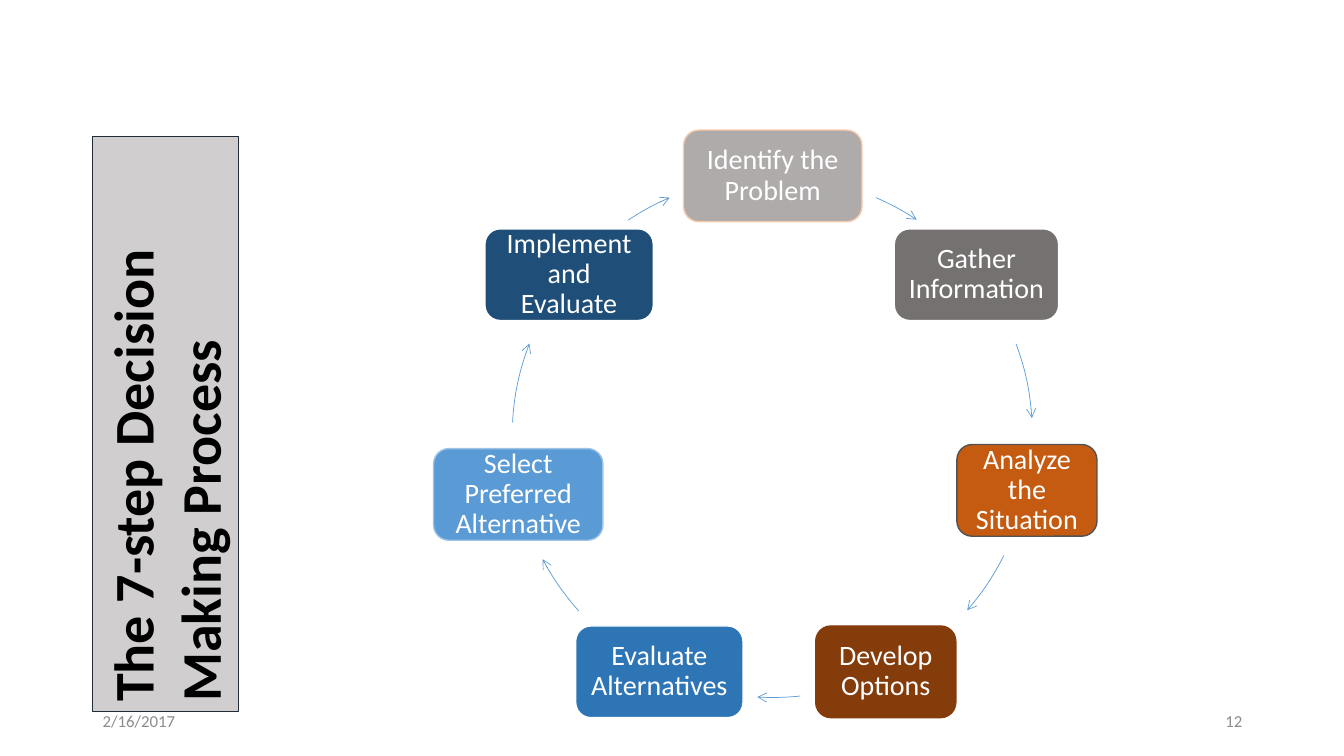
from pptx import Presentation
from pptx.util import Inches, Pt
from pptx.dml.color import RGBColor
from pptx.enum.shapes import MSO_SHAPE
from pptx.enum.text import PP_ALIGN, MSO_ANCHOR
from lxml.etree import SubElement
from pptx.oxml.ns import qn


def paint(form, color):
    form.rgb = RGBColor.from_string(color)


def write(shape, text, size, color, align, **extra):
    frame = shape.text_frame
    frame.word_wrap = True
    for key, value in extra.items():
        setattr(frame, key, value)
    para = frame.paragraphs[0]
    para.alignment = align
    run = para.add_run()
    run.text = text
    for key, value in {"name": "Calibri", "size": Pt(size)}.items():
        setattr(run.font, key, value)
    paint(run.font.color, color)
    return para


deck = Presentation()
deck.slide_width, deck.slide_height = Inches(13.33), Inches(7.5)
slide = deck.slides.add_slide(deck.slide_layouts[6])
shapes = slide.shapes

# Steps: text, left, top, width, fill, line
steps = [
    ("Identify the Problem", 6.78, 1.29, 1.77, "AFABAB", "F8CBAD"),
    ("Gather Information", 8.87, 2.27, 1.63, "767171", "FFFFFF"),
    ("Analyze the Situation", 9.49, 4.41, 1.39, "C55A11", "525252"),
    ("Develop Options", 8.09, 6.21, 1.39, "843C0B", "843C0B"),
    ("Evaluate Alternatives", 5.71, 6.21, 1.66, "2E75B6", "FFFFFF"),
    ("Select Preferred Alternative", 4.3, 4.45, 1.68, "5B9BD5", "9DC3E6"),
    ("Implement and Evaluate", 4.81, 2.27, 1.67, "1F4E79", "FFFFFF"),
]
inset = {f"margin_{side}": Inches(0.07) for side in ("left", "top", "right", "bottom")}
for text, left, top, width, fill, line in steps:
    box = shapes.add_shape(MSO_SHAPE.ROUNDED_RECTANGLE, Inches(left), Inches(top),
                           Inches(width), Inches(0.91))
    box.shadow.inherit = False
    box.fill.solid()
    paint(box.fill.fore_color, fill)
    paint(box.line.color, line)
    box.line.width = Pt(1)
    para = write(box, text, 20, "FFFFFF", PP_ALIGN.CENTER,
                 vertical_anchor=MSO_ANCHOR.MIDDLE, **inset)
    para.line_spacing = 0.9

# Arrows on the circle: left, top, start and end angle in degrees
arcs = [
    (5.08, 1.75, 293.3, 303.5),
    (5.07, 1.73, 339.5, 356.3),
    (5.06, 1.77, 26.6, 41.1),
    (5.08, 1.75, 83.9, 93.4),
    (5.08, 1.75, 138.1, 152),
    (5.08, 1.75, 183.2, 201),
    (5.08, 1.75, 236.3, 246.7),
]
for left, top, start, end in arcs:
    arc = shapes.add_shape(MSO_SHAPE.ARC, Inches(left), Inches(top),
                           Inches(5.17), Inches(5.17))
    arc.shadow.inherit = False
    arc.fill.background()
    # Angles count in 60000ths of a degree, adjustments in 100000ths
    arc.adjustments[0], arc.adjustments[1] = start * 0.6, end * 0.6
    paint(arc.line.color, "5B9BD5")
    arc.line.width = Pt(0.5)
    SubElement(arc.element.spPr.find(qn("a:ln")), qn("a:tailEnd"), type="arrow")

# Turned title
title = shapes.add_shape(MSO_SHAPE.RECTANGLE, Inches(-1.21), Inches(3.48),
                         Inches(5.71), Inches(1.45))
title.rotation = 270
title.shadow.inherit = False
title.fill.solid()
paint(title.fill.fore_color, "D0CECE")
paint(title.line.color, "222A35")
title.line.width = Pt(0.75)
para = write(title, "The 7-step Decision Making Process", 40, "000000",
             PP_ALIGN.LEFT, vertical_anchor=MSO_ANCHOR.TOP)
para.runs[0].font.bold = True

# Footer
for text, left, align in (("2/16/2017", 0.92, PP_ALIGN.LEFT), ("12", 9.42, PP_ALIGN.RIGHT)):
    note = shapes.add_textbox(Inches(left), Inches(6.95), Inches(3), Inches(0.4))
    write(note, text, 12, "8C8C8C", align, vertical_anchor=MSO_ANCHOR.MIDDLE)

deck.save("out.pptx")
